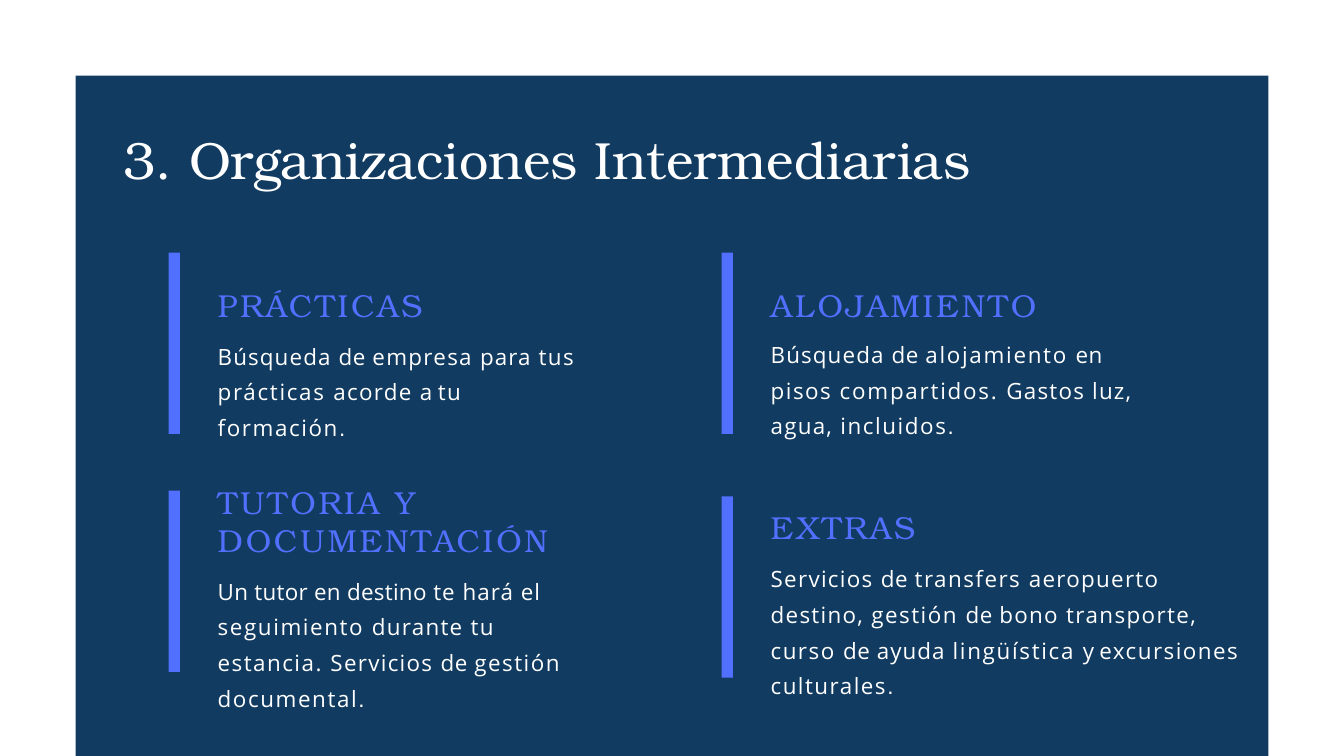
from pptx import Presentation
from pptx.dml.color import RGBColor
from pptx.enum.shapes import MSO_SHAPE
from pptx.enum.text import MSO_ANCHOR, MSO_AUTO_SIZE, PP_ALIGN
from pptx.util import Pt

EMU_PER_PX = 9525
NAVY = RGBColor(0x11, 0x3B, 0x60)
BLUE = RGBColor(0x52, 0x70, 0xFF)
WHITE = RGBColor(0xFF, 0xFF, 0xFF)
SERIF, SANS, STOP_FONT = "TeX Gyre Bonum", "Open Sans", "Arial"
LEFT, RIGHT = 241, 1031
BAR_W, BAR_H, TEXT_GAP = 16, 259, 70

# column, bar top, text top, width, height, space before body, headings, (text, tracking)
SERVICES = [
    (LEFT, 361, 406, 534, 226, 10.9, ["PRÁCTICAS"],
     [("Búsqueda ", 1.2), ("de ", 0.6), ("empresa ", 1.4), ("para ", 1.1), ("tus ", 1.6),
      ("prácticas ", 1.8), ("acorde ", 1.4), ("a ", -0.3), ("tu ", 1.4), ("formación", 1.7)]),
    (LEFT, 701, 688, 543, 327, 10.9, ["TUTORIA Y", "DOCUMENTACIÓN"],
     [("Un tutor en destino ", 0.3), ("te hará ", 1.1), ("el ", 0.8), ("seguimiento ", 1.7),
      ("durante tu ", 1.4), ("estancia. ", 1.6), ("Servicios ", 1.4), ("de ", 0.6),
      ("gestión ", 1.6), ("documental", 1.7)]),
    (RIGHT, 361, 406, 561, 223, 9.1, ["ALOJAMIENTO"],
     [("Búsqueda ", 1.2), ("de ", 0.6), ("alojamiento ", 1.8), ("en ", 0.5), ("pisos ", 1.6),
      ("compartidos. ", 1.9), ("Gastos luz, agua, ", 1.3), ("incluidos", 1.7)]),
    (RIGHT, 709, 724, 694, 272, 10.9, ["EXTRAS"],
     [("Servicios ", 1.4), ("de ", 0.6), ("transfers ", 1.6), ("aeropuerto destino, ", 1.4),
      ("gestión ", 1.6), ("de ", 0.6), ("bono ", 1.4), ("transporte, ", 1.5), ("curso ", 1.6),
      ("de ", 0.6), ("ayuda ", 1.1), ("lingüística ", 1.8), ("y ", -0.7),
      ("excursiones culturales", 1.6)]),
]


class Deck:
    """Holds the style and the current slide."""

    def __init__(self, width, height):
        self.prs = Presentation()
        self.prs.slide_width, self.prs.slide_height = self.px(width, height)
        self.s = self.prs.slides.add_slide(self.prs.slide_layouts[5])

    def px(self, *lengths):
        return [n * EMU_PER_PX for n in lengths]

    def style(self, r, font, size, color, tracking=0):
        r.font.name, r.font.size, r.font.color.rgb = font, Pt(size), color
        if tracking:
            r._r.get_or_add_rPr().set("spc", str(round(tracking * 100)))

    def frame(self, tf):
        tf.margin_left = tf.margin_right = tf.margin_bottom = 0
        tf.margin_top = self.px(2)[0]
        tf.word_wrap = True
        tf.auto_size = MSO_AUTO_SIZE.NONE
        tf.vertical_anchor = MSO_ANCHOR.TOP

    def rect(self, x, y, w, h, color):
        sp = self.s.shapes.add_shape(MSO_SHAPE.RECTANGLE, *self.px(x, y, w, h))
        sp.shadow.inherit = False
        sp.fill.solid()
        sp.fill.fore_color.rgb = color
        sp.line.fill.background()
        return sp

    def panel(self, x, y, w, h):
        sp = self.rect(x, y, w, h, NAVY)
        self.s.shapes._spTree.insert(2, sp._element)

    def title(self, text, x, y, w, h):
        sp = self.s.shapes.title
        sp.left, sp.top, sp.width, sp.height = self.px(x, y, w, h)
        tf = sp.text_frame
        self.frame(tf)
        tf.text = text
        p = tf.paragraphs[0]
        p.alignment = PP_ALIGN.LEFT
        self.style(p.runs[0], SERIF, 56, WHITE)

    def service(self, x, y, w, h, gap, headings, body):
        tf = self.s.shapes.add_textbox(*self.px(x, y, w, h)).text_frame
        self.frame(tf)
        tf.text = "\n".join(headings)
        for p in tf.paragraphs:
            if len(headings) > 1:
                p.line_spacing = Pt(40.6)
            self.style(p.runs[0], SERIF, 34, BLUE, 3)
        p = tf.add_paragraph()
        p.line_spacing = 1.33
        p.space_before = Pt(gap)
        for text, tracking in body:
            r = p.add_run()
            r.text = text
            self.style(r, SANS, 24, WHITE, tracking)
        r = p.add_run()
        r.text = "."
        self.style(r, STOP_FONT, 24, WHITE, 1.7)


def main():
    deck = Deck(1920, 1080)
    deck.panel(108, 108, 1704, 972)
    deck.title("3. Organizaciones Intermediarias", 176, 180, 1620, 92)
    for x, bar_y, text_y, w, h, gap, headings, body in SERVICES:
        deck.rect(x, bar_y, BAR_W, BAR_H, BLUE)
        deck.service(x + TEXT_GAP, text_y, w, h, gap, headings, body)
    deck.prs.save("out.pptx")


if __name__ == "__main__":
    main()
